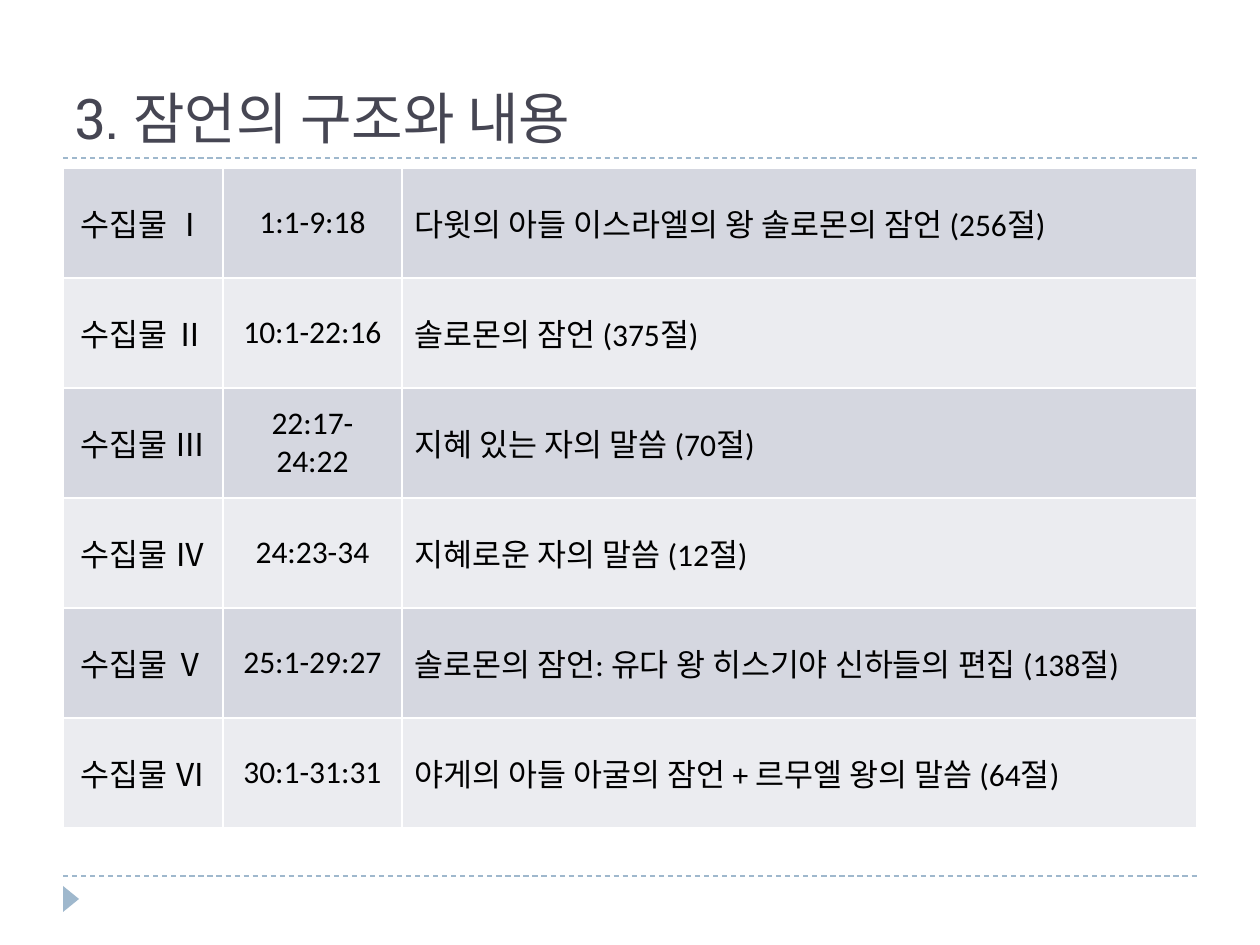
"""Build the slide on the structure and contents of Proverbs."""
from typing import NamedTuple

from lxml import etree
from pptx import Presentation, util as u
from pptx.dml import color
from pptx.enum import dml, shapes, text
from pptx.oxml import ns

COLORS = {"accent": "9FB8CD", "title": "464653", "text": "000000",
          "odd": "D5D7E0", "even": "EBECF0", "border": "FFFFFF"}
PX = 914400 / 126
LEFT, WIDTH = 63, 1134
COLUMNS = (160, 179, 795)
ROW_HEIGHT = 110
RULES = (876, 158)


class Collection(NamedTuple):
    numeral: str
    verses: str
    contents: str


COLLECTIONS = (
    Collection("Ⅰ", "1:1-9:18", "다윗의 아들 이스라엘의 왕 솔로몬의 잠언 (256절)"),
    Collection("Ⅱ", "10:1-22:16", "솔로몬의 잠언 (375절)"),
    Collection("Ⅲ", "22:17-24:22", "지혜 있는 자의 말씀 (70절)"),
    Collection("Ⅳ", "24:23-34", "지혜로운 자의 말씀 (12절)"),
    Collection("Ⅴ", "25:1-29:27", "솔로몬의 잠언: 유다 왕 히스기야 신하들의 편집 (138절)"),
    Collection("Ⅵ", "30:1-31:31", "야게의 아들 아굴의 잠언 + 르무엘 왕의 말씀 (64절)"),
)


def px(*lengths: int) -> list[u.Emu]:
    return [u.Emu(round(length * PX)) for length in lengths]


def rgb(name: str) -> color.RGBColor:
    return color.RGBColor.from_string(COLORS[name])


def set_font(font, name: str, size: int, tint: str) -> None:
    font.name, font.size = name, u.Pt(size)
    font.color.rgb = rgb(tint)


def add_rule(slide, y: int) -> None:
    rule = slide.shapes.add_connector(
        shapes.MSO_CONNECTOR.STRAIGHT, *px(LEFT, y, LEFT + WIDTH, y))
    rule.line.color.rgb = rgb("accent")
    rule.line.width = u.Pt(0.75)
    rule.line.dash_style = dml.MSO_LINE.DASH
    etree.SubElement(rule._element.spPr, ns.qn("a:effectLst"))


def add_marker(slide) -> None:
    marker = slide.shapes.add_shape(
        shapes.MSO_SHAPE.ISOSCELES_TRIANGLE, *px(58, 891, 26, 16))
    marker.rotation = 90
    marker.shadow.inherit = False
    marker.fill.solid()
    marker.fill.fore_color.rgb = rgb("accent")
    marker.line.fill.background()


def add_title(slide, wording: str) -> None:
    frame = slide.shapes.add_textbox(*px(LEFT, 21, WIDTH, 136)).text_frame
    frame.word_wrap = True
    frame.vertical_anchor = text.MSO_ANCHOR.BOTTOM
    heading = frame.paragraphs[0]
    heading.text = wording
    set_font(heading.font, "Roboto Slab", 32, "title")


def style_cell(cell, fill: str) -> None:
    properties = cell._tc.get_or_add_tcPr()
    for side in ("lnL", "lnR", "lnT", "lnB"):
        border = etree.SubElement(properties, ns.qn(f"a:{side}"), w=str(u.Pt(1)))
        solid = etree.SubElement(border, ns.qn("a:solidFill"))
        etree.SubElement(solid, ns.qn("a:srgbClr"), val=COLORS["border"])
    cell.fill.solid()
    cell.fill.fore_color.rgb = rgb(fill)
    cell.vertical_anchor = text.MSO_ANCHOR.MIDDLE


def fill_row(cells, collection: Collection, fill: str) -> None:
    wordings = ("수집물 ", collection.verses, collection.contents)
    for column, (cell, wording) in enumerate(zip(cells, wordings)):
        style_cell(cell, fill)
        line = cell.text_frame.paragraphs[0]
        line.add_run().text = wording
        if column < 2:
            line.alignment = text.PP_ALIGN.CENTER
        if column == 0:
            numeral = line.add_run()
            numeral.text = collection.numeral
            numeral.font.name = "Noto Sans CJK KR"
        set_font(line.font, "Calibri", 18, "text")
        for run in line.runs:
            run.font.size = u.Pt(18)
            run.font.color.rgb = rgb("text")
        line.runs[0].font.name = "Calibri"


def add_collections(slide) -> None:
    table = slide.shapes.add_table(
        len(COLLECTIONS), len(COLUMNS),
        *px(LEFT, 168, WIDTH, ROW_HEIGHT * len(COLLECTIONS))).table
    table.first_row = table.horz_banding = False
    for column, width in zip(table.columns, px(*COLUMNS)):
        column.width = width
    for index, (row, collection) in enumerate(zip(table.rows, COLLECTIONS)):
        fill_row(row.cells, collection, "even" if index % 2 else "odd")


def main() -> None:
    deck = Presentation()
    deck.slide_width, deck.slide_height = px(1260, 945)
    slide = deck.slides.add_slide(deck.slide_layouts[6])
    for y in RULES:
        add_rule(slide, y)
    add_marker(slide)
    add_title(slide, "3. 잠언의 구조와 내용")
    add_collections(slide)
    deck.save("out.pptx")


if __name__ == "__main__":
    main()
